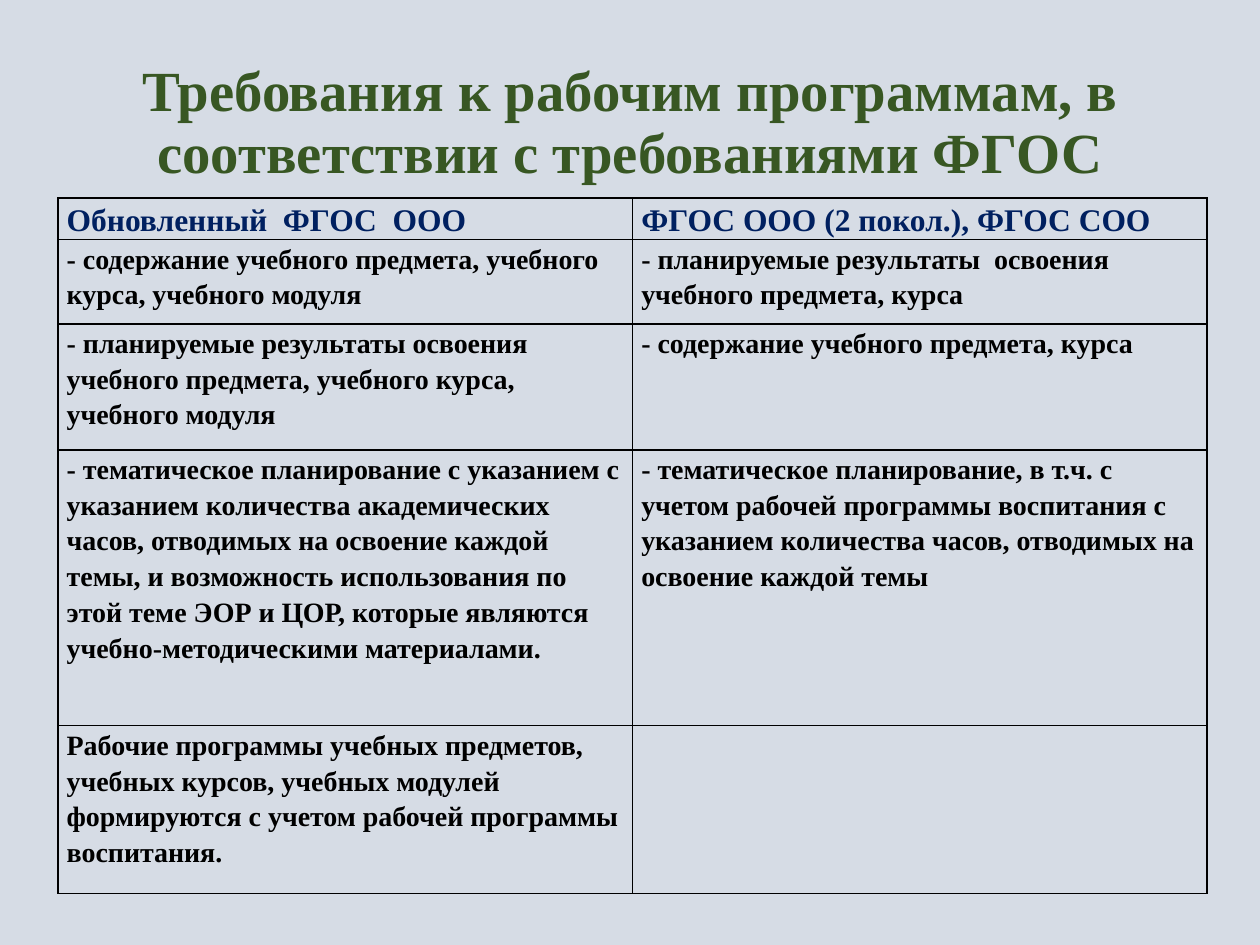
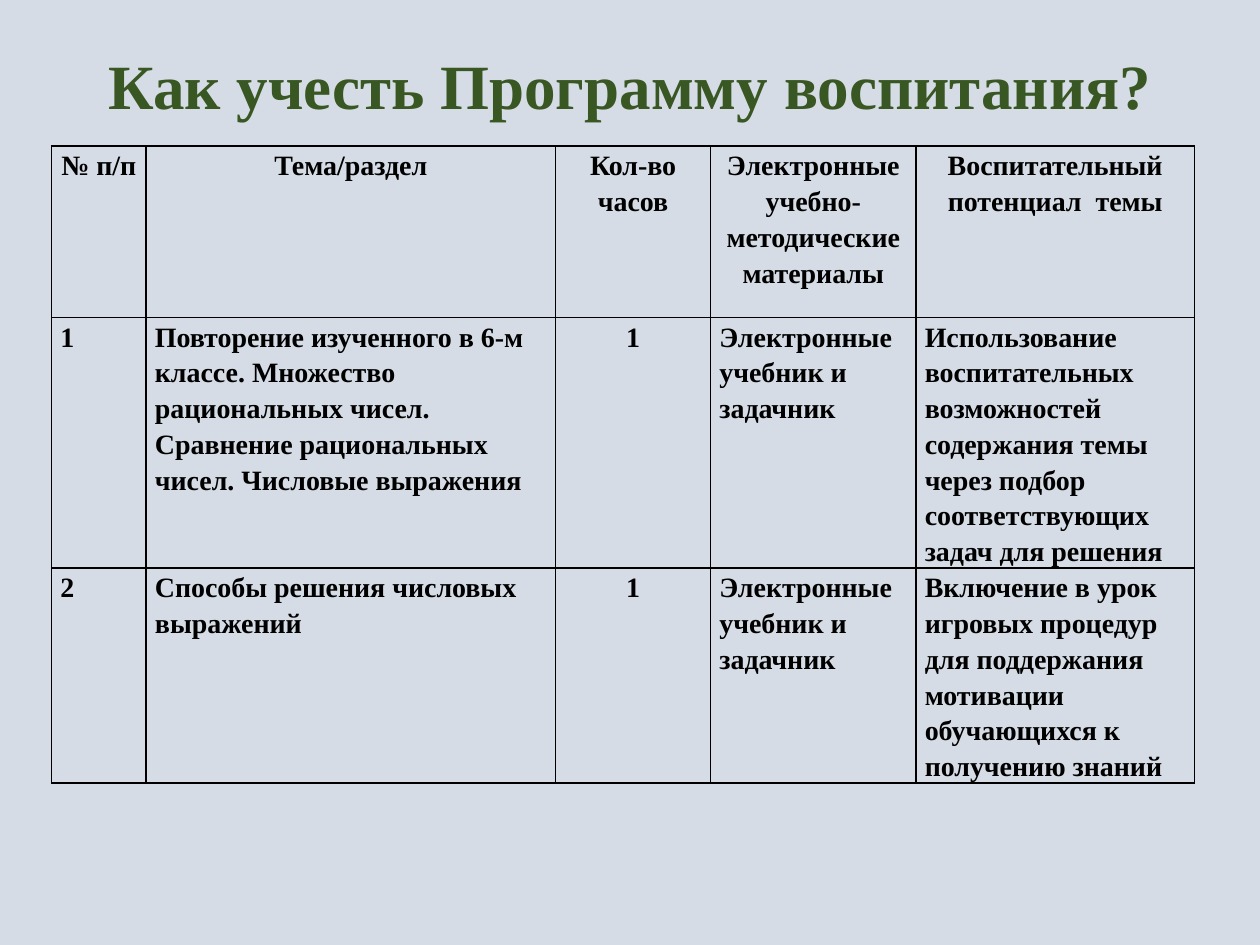
"""Build two slides on work programmes and the upbringing programme."""
from lxml.etree import SubElement
from pptx import Presentation
from pptx.dml.color import RGBColor
from pptx.enum.text import MSO_ANCHOR, MSO_AUTO_SIZE, PP_ALIGN
from pptx.oxml.ns import qn
from pptx.util import Inches, Pt

COLORS = {"back": "D6DCE5", "title": "385723", "head": "002060", "text": "000000"}
FONT = "Times New Roman"

RULES = [
    ["Обновленный  ФГОС  ООО", "ФГОС ООО (2 покол.), ФГОС СОО"],
    ["- содержание учебного предмета, учебного курса, учебного модуля",
     "- планируемые результаты  освоения  учебного предмета, курса"],
    ["- планируемые результаты освоения учебного предмета, учебного курса, "
     "учебного модуля",
     "- содержание учебного предмета, курса"],
    ["- тематическое планирование с указанием с указанием количества "
     "академических часов, отводимых на освоение каждой темы, и возможность "
     "использования по этой теме ЭОР и ЦОР, которые являются учебно-методическими "
     "материалами.",
     "- тематическое планирование, в т.ч. с учетом рабочей программы воспитания "
     "с указанием количества часов, отводимых на освоение каждой темы"],
    ["Рабочие программы учебных предметов, учебных курсов, учебных модулей "
     "формируются с учетом рабочей программы воспитания.", ""],
]

BOOKS = "Электронные учебник и задачник"
TOPICS = [
    ["№ п/п", "Тема/раздел", "Кол-во часов",
     "Электронные учебно-методические материалы", "Воспитательный потенциал  темы"],
    ["1",
     "Повторение изученного в 6-м классе. Множество рациональных чисел. "
     "Сравнение рациональных чисел. Числовые выражения",
     "1", BOOKS,
     "Использование воспитательных возможностей содержания темы через подбор "
     "соответствующих задач для решения"],
    ["2", "Способы решения числовых выражений", "1", BOOKS,
     "Включение в урок игровых процедур для поддержания мотивации обучающихся "
     "к получению знаний"],
]


def paint(name):
    return RGBColor.from_string(COLORS[name])


def style(para, size, color, align, space):
    para.alignment = align
    para.line_spacing = space
    font = para.font
    font.name, font.size, font.bold = FONT, Pt(size), True
    font.color.rgb = paint(color)


def add_slide(deck, title, top, height, size):
    slide = deck.slides.add_slide(deck.slide_layouts[5])
    shape = slide.shapes.title
    shape.left, shape.top = Inches(0.69), Inches(top)
    shape.width, shape.height = Inches(8.62), Inches(height)
    frame = shape.text_frame
    frame.text = title
    frame.word_wrap = True
    frame.auto_size = MSO_AUTO_SIZE.NONE
    frame.vertical_anchor = MSO_ANCHOR.MIDDLE
    style(frame.paragraphs[0], size, "title", PP_ALIGN.CENTER, 0.9)
    return slide


def frame_cell(cell):
    props = cell._tc.get_or_add_tcPr()
    for side in ("a:lnL", "a:lnR", "a:lnT", "a:lnB"):
        line = SubElement(props, qn(side), w=str(Pt(1)))
        fill = SubElement(line, qn("a:solidFill"))
        SubElement(fill, qn("a:srgbClr"), val=COLORS["text"])


def fill_cell(cell, text, size, color, align):
    cell.margin_left = cell.margin_right = Inches(0.07)
    cell.margin_top = cell.margin_bottom = 0
    frame_cell(cell)
    cell.fill.background()
    cell.text = text
    style(cell.text_frame.paragraphs[0], size, color, align, 1.15)


def add_grid(slide, rows, left, top, widths, heights, head, mid=()):
    """Draw a ruled table; head is (size, colour, align), mid lists centred columns."""
    grid = slide.shapes.add_table(
        len(rows), len(widths), Inches(left), Inches(top),
        Inches(sum(widths)), Inches(sum(heights))).table
    grid.first_row = grid.horz_banding = False
    for col, width in zip(grid.columns, widths):
        col.width = Inches(width)
    for r, (row, height) in enumerate(zip(rows, heights)):
        grid.rows[r].height = Inches(height)
        for c, text in enumerate(row):
            align = PP_ALIGN.CENTER if c in mid else PP_ALIGN.LEFT
            look = (16, "text", align) if r else head
            fill_cell(grid.cell(r, c), text, *look)


def main():
    deck = Presentation()
    deck.slide_width, deck.slide_height = Inches(10), Inches(7.5)
    back = deck.slide_master.background.fill
    back.solid()
    back.fore_color.rgb = paint("back")

    slide = add_slide(
        deck, "Требования к рабочим программам, в соответствии с требованиями ФГОС",
        0.4, 1.17, 32.4)
    add_grid(slide, RULES, 0.46, 1.57, [4.56] * 2, [0.33, 0.67, 1, 2.19, 1.33],
             (18, "head", PP_ALIGN.LEFT))

    slide = add_slide(deck, "Как учесть Программу воспитания?", 0.32, 0.78, 36)
    add_grid(slide, TOPICS, 0.41, 1.16, [0.75, 3.25, 1.23, 1.63, 2.21],
             [1.36, 1.99, 1.7], (16, "text", PP_ALIGN.CENTER), mid=(2,))
    deck.save("out.pptx")


if __name__ == "__main__":
    main()
